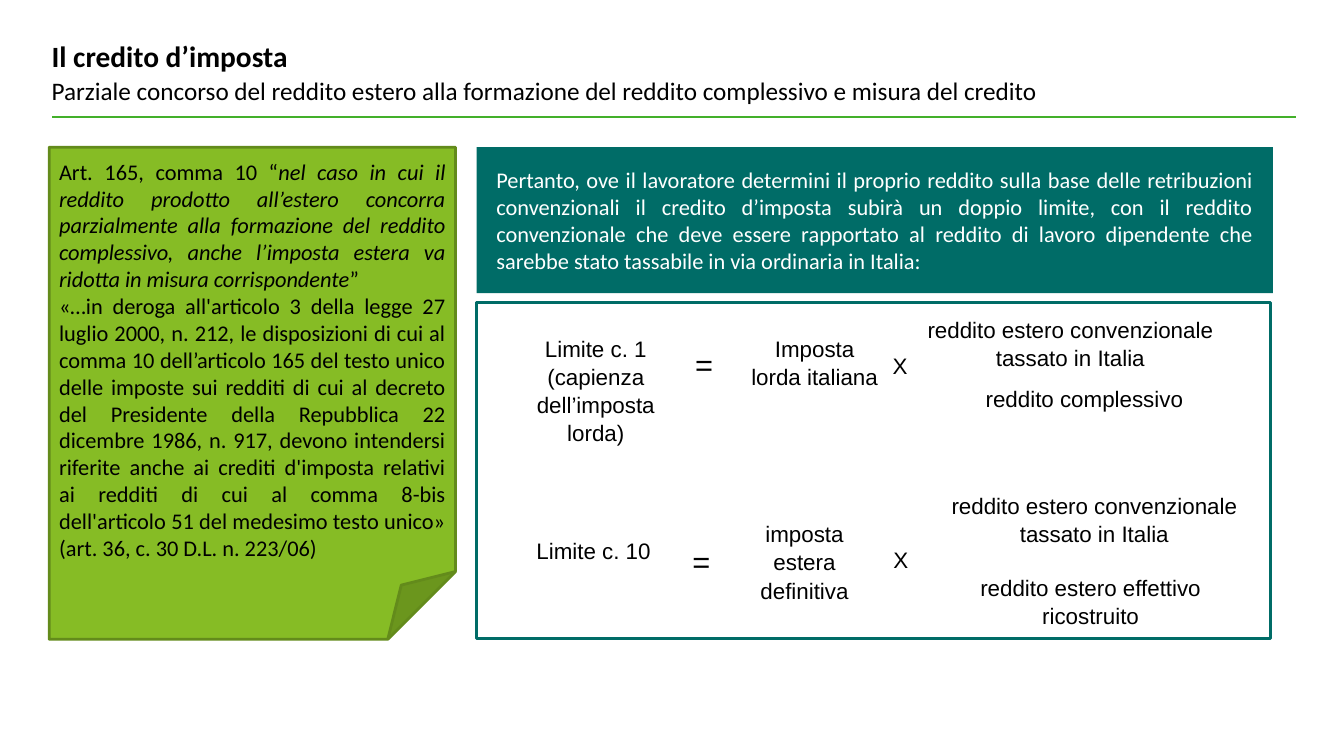
from typing import NamedTuple

from lxml.etree import SubElement
from pptx import Presentation
from pptx.dml.color import RGBColor
from pptx.enum.shapes import MSO_CONNECTOR, MSO_SHAPE
from pptx.enum.text import MSO_ANCHOR, MSO_AUTO_SIZE, PP_ALIGN
from pptx.oxml.ns import qn
from pptx.util import Cm, Pt

BLACK = RGBColor(0x00, 0x00, 0x00)
WHITE = RGBColor(0xFF, 0xFF, 0xFF)
GREEN = RGBColor(0x43, 0xB0, 0x2A)
LIME = RGBColor(0x86, 0xBC, 0x25)
OLIVE = RGBColor(0x63, 0x8B, 0x1B)
TEAL = RGBColor(0x00, 0x6C, 0x67)

TITLE = "Il credito d’imposta"
LEAD = (
    "Parziale concorso del reddito estero alla formazione del reddito "
    "complessivo e misura del credito"
)
LAW = (
    "Art. 165, comma 10 “*nel caso in cui il reddito prodotto all’estero "
    "concorra parzialmente alla formazione del reddito complessivo, anche "
    "l’imposta estera va ridotta in misura corrispondente*”\n"
    "«…in deroga all'articolo 3 della legge 27 luglio 2000, n. 212, le "
    "disposizioni di cui al comma 10 dell’articolo 165 del testo unico delle "
    "imposte sui redditi di cui al decreto del Presidente della Repubblica 22 "
    "dicembre 1986, n. 917, devono intendersi riferite anche ai crediti "
    "d'imposta relativi ai redditi di cui al comma 8-bis dell'articolo 51 del "
    "medesimo testo unico» (art. 36, c. 30 D.L. n. 223/06)"
)
RULE = (
    "Pertanto, ove il lavoratore determini il proprio reddito sulla base delle "
    "retribuzioni convenzionali il credito d’imposta subirà un doppio limite, "
    "con il reddito convenzionale che deve essere rapportato al reddito di "
    "lavoro dipendente che sarebbe stato tassabile in via ordinaria in Italia:"
)


class Box(NamedTuple):
    left: float
    top: float
    width: float
    height: float


class Term(NamedTuple):
    text: str
    box: Box
    size: int = 16
    align: PP_ALIGN = PP_ALIGN.CENTER


TERMS = [
    Term("Limite c. 1 (capienza dell’imposta lorda)", Box(12.5, 8.28, 5.03, 3)),
    Term("=", Box(17.27, 8.53, 1.65, 1.19), 22, PP_ALIGN.LEFT),
    Term("Imposta lorda italiana", Box(18.66, 8.28, 3.74, 1.63)),
    Term("X", Box(22.15, 8.71, 1.07, 0.94)),
    Term("reddito estero convenzionale tassato in Italia", Box(22.81, 7.8, 8.33, 1.63)),
    Term("reddito complessivo", Box(24.59, 9.53, 6.96, 0.94), align=PP_ALIGN.LEFT),
    Term("Limite c. 10", Box(12.37, 13.36, 5.18, 0.94)),
    Term("=", Box(17.2, 13.51, 1.65, 1.19), 22, PP_ALIGN.LEFT),
    Term("imposta estera definitiva", Box(18.42, 12.95, 3.71, 2.31)),
    Term("X", Box(22.17, 13.59, 1.07, 0.94)),
    Term("reddito estero convenzionale tassato in Italia", Box(23.62, 12.24, 7.92, 1.63)),
    Term("reddito estero effettivo ricostruito", Box(23.7, 14.3, 7.57, 1.63)),
]


def write(shape, text: str, *, size: int = 16, font: str = "Calibri",
          color: RGBColor = BLACK, bold: bool = False,
          align: PP_ALIGN = PP_ALIGN.LEFT, anchor: MSO_ANCHOR = MSO_ANCHOR.TOP,
          inset: tuple[float, float] = (0.25, 0.13), after: float = 0,
          pitch: float = 1) -> None:
    frame = shape.text_frame
    frame.word_wrap = True
    frame.auto_size = MSO_AUTO_SIZE.NONE
    frame.vertical_anchor = anchor
    frame.margin_left = frame.margin_right = Cm(inset[0])
    frame.margin_top = frame.margin_bottom = Cm(inset[1])
    for i, part in enumerate(text.split("\n")):
        para = frame.add_paragraph() if i else frame.paragraphs[0]
        para.alignment = align
        para.line_spacing = pitch
        para.space_before = Pt(0)
        para.space_after = Pt(after)
        if shape.is_placeholder:
            props = para._p.get_or_add_pPr()
            props.set("marL", "0")
            props.set("indent", "0")
            SubElement(props, qn("a:buNone"))
        for j, piece in enumerate(part.split("*")):
            run = para.add_run()
            run.text = piece
            run.font.name = font
            run.font.size = Pt(size)
            run.font.bold = bold
            run.font.italic = j % 2 == 1
            run.font.color.rgb = color


def place(shape, box: Box) -> None:
    shape.left, shape.top, shape.width, shape.height = map(Cm, box)


def panel(slide, kind: MSO_SHAPE, box: Box, edge: RGBColor,
          fill: RGBColor | None = None):
    shape = slide.shapes.add_shape(kind, *map(Cm, box))
    shape.shadow.inherit = False
    if fill is None:
        shape.fill.background()
    else:
        shape.fill.solid()
        shape.fill.fore_color.rgb = fill
    shape.line.color.rgb = edge
    shape.line.width = Pt(2)
    return shape


def main() -> None:
    deck = Presentation()
    deck.slide_width, deck.slide_height = Cm(33.87), Cm(19.05)
    slide = deck.slides.add_slide(deck.slide_layouts[3])
    title, lead, rule = slide.placeholders

    place(title, Box(1.3, 0.97, 31.32, 0.94))
    write(title, TITLE, size=21, bold=True, inset=(0, 0))
    place(lead, Box(1.3, 1.9, 31.32, 2.1))
    write(lead, LEAD, size=18, inset=(0, 0), after=7.5)

    line = slide.shapes.add_connector(
        MSO_CONNECTOR.STRAIGHT, Cm(1.32), Cm(2.95), Cm(32.66), Cm(2.95))
    line.line.color.rgb = GREEN
    line.line.width = Pt(2)
    SubElement(line._element.spPr, qn("a:effectLst"))

    law = panel(slide, MSO_SHAPE.FOLDED_CORNER, Box(1.24, 3.71, 10.24, 12.4), OLIVE, LIME)
    write(law, LAW, align=PP_ALIGN.JUSTIFY, anchor=MSO_ANCHOR.MIDDLE)

    place(rule, Box(12.01, 3.71, 20.07, 3.68))
    rule.fill.solid()
    rule.fill.fore_color.rgb = TEAL
    write(rule, RULE, color=WHITE, align=PP_ALIGN.JUSTIFY,
          anchor=MSO_ANCHOR.MIDDLE, inset=(0.5, 0.5), after=7.5)

    panel(slide, MSO_SHAPE.RECTANGLE, Box(12.01, 7.62, 20.02, 8.48), TEAL)
    for term in TERMS:
        note = slide.shapes.add_textbox(*map(Cm, term.box))
        write(note, term.text, size=term.size, font="Arial", align=term.align,
              pitch=1.05)

    deck.save("out.pptx")


if __name__ == "__main__":
    main()
